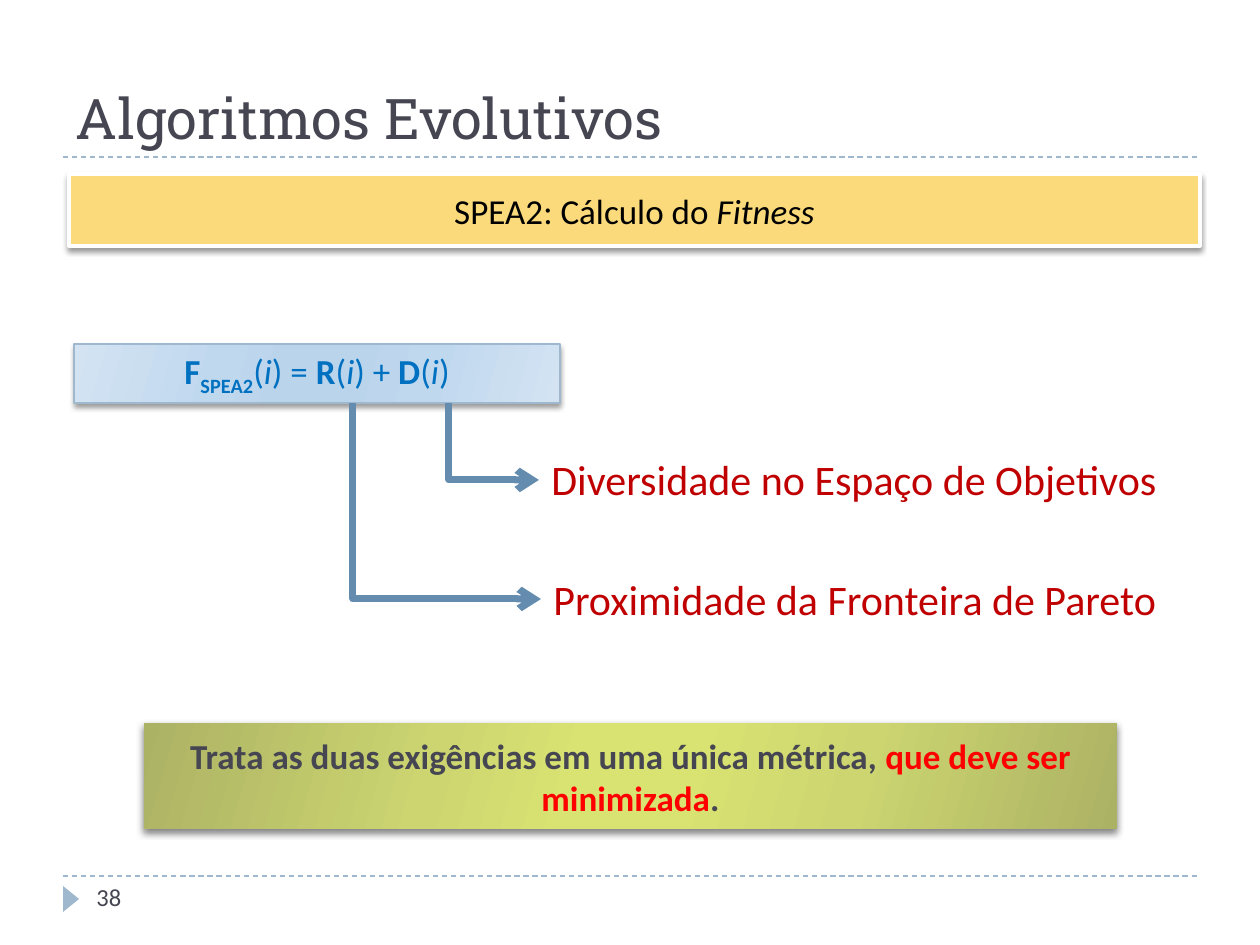
import dataclasses
import typing

import lxml.etree
import pptx
import pptx.dml.color
import pptx.enum.dml
import pptx.enum.shapes
import pptx.enum.text
import pptx.oxml.ns
import pptx.util

SCALE = 914400 / 126
SHAPES = pptx.enum.shapes.MSO_SHAPE
LINKS = pptx.enum.shapes.MSO_CONNECTOR
ALIGN = pptx.enum.text.PP_ALIGN
ANCHOR = pptx.enum.text.MSO_ANCHOR
Box = tuple[int, int, int, int]
Run = tuple[str, dict[str, typing.Any]]

BOLD = {"bold": True}
ITALIC = {"italic": True}
SUB = {"bold": True, "base": -25000}
STOPS = (0, 30, 45, 55, 73, 100)


@dataclasses.dataclass
class Panel:
    box: Box
    runs: list[Run]
    color: str
    fills: list[str]
    edge: tuple[str, float] | None
    shade: tuple[int, int]


@dataclasses.dataclass
class Branch:
    label: str
    box: Box
    start: tuple[int, int]
    end: tuple[int, int]


PANELS = [
    Panel((69, 174, 1131, 72), [("SPEA2: Cálculo do ", {}), ("Fitness", ITALIC)],
          "000000", ["FADA7A"], ("FFFFFF", 2), (40, 3)),
    Panel((74, 344, 486, 59),
          [("F", BOLD), ("SPEA2", SUB), ("(", {}), ("i", ITALIC), (") = ", {}),
           ("R", BOLD), ("(", {}), ("i", ITALIC), (") + ", {}),
           ("D", BOLD), ("(", {}), ("i", ITALIC), (")", {})],
          "0070C0", ["D3E3F2", "C0D8EE", "BAD4EC"], ("9FB8CD", 0.75), (40, 3)),
    Panel((144, 723, 973, 106),
          [("Trata as duas exigências em uma única métrica, ", BOLD),
           ("que deve ser minimizada", {"bold": True, "color": "FF0000"}),
           (".", BOLD)],
          "464653", ["ACB264", "CCD570", "D9E371"], None, (50, 4)),
]
BRANCHES = [
    Branch("Proximidade da Fronteira de Pareto", (541, 567, 655, 63),
           (353, 403), (541, 599)),
    Branch("Diversidade no Espaço de Objetivos", (539, 447, 646, 63),
           (449, 403), (539, 480)),
]


def emu(px: int) -> int:
    return round(px * SCALE)


def rgb(code: str) -> pptx.dml.color.RGBColor:
    return pptx.dml.color.RGBColor.from_string(code)


def node(root, tag: str, **attrs: str):
    item = lxml.etree.SubElement(root, pptx.oxml.ns.qn(tag))
    for key, value in attrs.items():
        item.set(key, value)
    return item


def apply(target, values: dict[str, typing.Any]) -> None:
    for key, value in values.items():
        setattr(target, key, value)


def write(shape, runs: list[Run], size: int, color: str, face: str = "Calibri",
          align=ALIGN.LEFT, anchor=ANCHOR.TOP) -> None:
    frame = shape.text_frame
    apply(frame, {"word_wrap": True, "vertical_anchor": anchor,
                  "auto_size": pptx.enum.text.MSO_AUTO_SIZE.NONE})
    para = frame.paragraphs[0]
    para.alignment = align
    for text, style in runs:
        run = para.add_run()
        run.text = text
        look = {"name": face, "size": pptx.util.Pt(size),
                "bold": False, "italic": False} | style
        run.font.color.rgb = rgb(look.pop("color", color))
        base = look.pop("base", 0)
        apply(run.font, look)
        if base:
            run.font._element.set("baseline", str(base))


def label(slide, box: Box, text: str, size: int, color: str) -> None:
    shape = slide.shapes.add_textbox(*map(emu, box))
    write(shape, [(text, {})], size, color)


def blend(shape, colors: list[str]) -> None:
    shape.fill.gradient()
    shape.fill.gradient_angle = 344
    stops = shape._element.spPr.find(".//" + pptx.oxml.ns.qn("a:gsLst"))
    for old in list(stops):
        stops.remove(old)
    for pos, code in zip(STOPS, colors + colors[::-1]):
        stop = node(stops, "a:gs", pos=str(pos * 1000))
        node(stop, "a:srgbClr", val=code)


def shade(shape, alpha: int, blur: int) -> None:
    shape.shadow.inherit = False
    effects = shape._element.spPr.find(pptx.oxml.ns.qn("a:effectLst"))
    outer = node(effects, "a:outerShdw", blurRad=str(pptx.util.Pt(blur)),
                 dist=str(pptx.util.Pt(2)), dir="5400000", rotWithShape="0")
    tint = node(outer, "a:srgbClr", val="000000")
    node(tint, "a:alpha", val=str(alpha * 1000))


def panel(slide, item: Panel) -> None:
    shape = slide.shapes.add_shape(SHAPES.RECTANGLE, *map(emu, item.box))
    if len(item.fills) > 1:
        blend(shape, item.fills)
    else:
        shape.fill.solid()
        shape.fill.fore_color.rgb = rgb(item.fills[0])
    if item.edge:
        shape.line.color.rgb = rgb(item.edge[0])
        shape.line.width = pptx.util.Pt(item.edge[1])
    else:
        shape.line.fill.background()
    shade(shape, *item.shade)
    write(shape, item.runs, 20, item.color, align=ALIGN.CENTER,
          anchor=ANCHOR.MIDDLE)


def link(slide, kind, start: tuple[int, int], end: tuple[int, int],
         color: str, width: float):
    line = slide.shapes.add_connector(kind, *map(emu, start + end))
    line.line.color.rgb = rgb(color)
    line.line.width = pptx.util.Pt(width)
    node(line._element.spPr, "a:effectLst")
    return line


def rule(slide, y: int) -> None:
    line = link(slide, LINKS.STRAIGHT, (63, y), (1197, y), "9FB8CD", 0.75)
    line.line.dash_style = pptx.enum.dml.MSO_LINE.DASH


def branch(slide, item: Branch) -> None:
    label(slide, item.box, item.label, 24, "C00000")
    line = link(slide, LINKS.ELBOW, item.start, item.end, "638CAE", 4)
    guides = line._element.spPr.find(".//" + pptx.oxml.ns.qn("a:avLst"))
    node(guides, "a:gd", name="adj1", fmla="val 0")
    node(line.line._get_or_add_ln(), "a:tailEnd", type="arrow")


def main() -> None:
    deck = pptx.Presentation()
    apply(deck, {"slide_width": emu(1260), "slide_height": emu(945)})
    slide = deck.slides.add_slide(deck.slide_layouts[5])
    title = slide.shapes.title
    spots = ("left", "top", "width", "height")
    apply(title, dict(zip(spots, map(emu, (63, 21, 1134, 136)))))
    write(title, [("Algoritmos Evolutivos", {})], 32, "464653", "Roboto Slab",
          anchor=ANCHOR.BOTTOM)
    for y in (157, 876):
        rule(slide, y)
    mark = slide.shapes.add_shape(SHAPES.ISOSCELES_TRIANGLE,
                                  *map(emu, (58, 891, 26, 16)))
    mark.rotation = 90
    mark.shadow.inherit = False
    mark.fill.solid()
    mark.fill.fore_color.rgb = rgb("9FB8CD")
    mark.line.fill.background()
    for item in PANELS:
        panel(slide, item)
    for item in BRANCHES:
        branch(slide, item)
    label(slide, (84, 876, 273, 50), "38", 14, "464653")
    deck.save("out.pptx")


if __name__ == "__main__":
    main()
